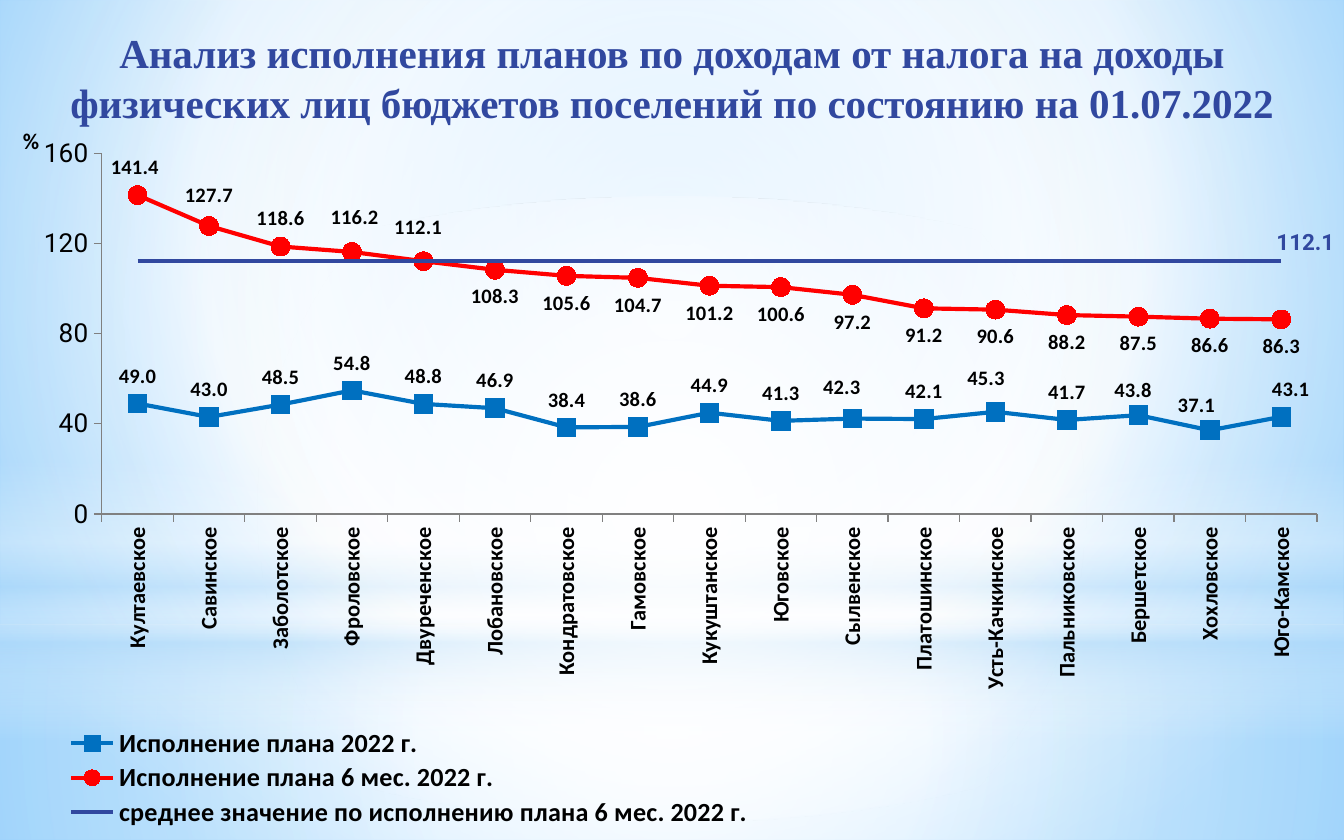
from dataclasses import dataclass, field

from lxml import etree
from pptx import Presentation
from pptx.chart.data import CategoryChartData
from pptx.dml.color import RGBColor
from pptx.enum import chart as ch, shapes, text
from pptx.oxml import parse_xml
from pptx.oxml.ns import nsdecls, qn
from pptx.util import Cm, Pt

COLORS = {"navy": "31489F", "blue": "0070C0", "red": "FF0000", "axis": "808080",
          "black": "000000", "white": "FFFFFF", "haze": "B4DCFA",
          "sky": "9ED5FF", "deep": "5BB9FF"}
WIDTH, HEIGHT = 25.4, 15.88
CENTER = (50, 50, 50, 50)
TITLE = ("Анализ исполнения планов по доходам от налога на доходы "
         "физических лиц бюджетов поселений по состоянию на 01.07.2022")
SETTLEMENTS = ["Култаевское", "Савинское", "Заболотское", "Фроловское", "Двуреченское",
               "Лобановское", "Кондратовское", "Гамовское", "Кукуштанское", "Юговское",
               "Сылвенское", "Платошинское", "Усть-Качкинское", "Пальниковское",
               "Бершетское", "Хохловское", "Юго-Камское"]
LAST = len(SETTLEMENTS) - 1
ABOVE, BELOW = ch.XL_LABEL_POSITION.ABOVE, ch.XL_LABEL_POSITION.BELOW


@dataclass
class Glow:
    """Gradient-filled backdrop shape; stops are (position, colour, opacity) in percent."""
    kind: shapes.MSO_SHAPE
    top: float
    height: float
    stops: list
    focus: tuple | None = CENTER


@dataclass
class Line:
    """Chart series; moved maps a point to the (x, y) shift of its label."""
    name: str
    values: list
    color: str
    marker: ch.XL_MARKER_STYLE
    label_position: ch.XL_LABEL_POSITION
    label_color: str = "black"
    label_size: int = 11
    label_font: str = "Calibri"
    label_all: bool = True
    moved: dict = field(default_factory=dict)


RECTANGLE, OVAL = shapes.MSO_SHAPE.RECTANGLE, shapes.MSO_SHAPE.OVAL
GLOWS = [
    Glow(RECTANGLE, 11.81, 4.07, [(0, "white", 91), (37, "white", 76), (100, "haze", 79)]),
    Glow(RECTANGLE, 0, 11.81, [(0, "white", 89), (48, "white", 62), (100, "haze", 79)]),
    Glow(RECTANGLE, 8.71, 5.28, [(0, "white", 0), (29, "white", 30), (45, "haze", 40),
                                 (55, "white", 26), (65, "haze", 60), (100, "white", 0)], None),
    Glow(OVAL, 3.71, 11.81, [(0, "white", 100), (56, "white", 0)]),
]
LINES = [
    Line("Исполнение плана 2022 г.",
         [49, 43, 48.5, 54.8, 48.8, 46.9, 38.4, 38.6, 44.9, 41.3, 42.3, 42.1, 45.3,
          41.7, 43.8, 37.1, 43.1],
         "blue", ch.XL_MARKER_STYLE.SQUARE, ABOVE,
         moved={10: (-0.008, -0.005), 12: (-0.007, -0.008), 14: (-0.004, 0.003),
                15: (-0.01, 0.003), 16: (0.007, 0)}),
    Line("Исполнение плана 6 мес. 2022 г.",
         [141.4, 127.7, 118.6, 116.2, 112.1, 108.3, 105.6, 104.7, 101.2, 100.6, 97.2,
          91.2, 90.6, 88.2, 87.5, 86.6, 86.3],
         "red", ch.XL_MARKER_STYLE.CIRCLE, BELOW,
         moved={0: (-0.002, 0), 1: (0, -0.004), 2: (0, -0.001), 3: (0.002, -0.009),
                4: (-0.004, -0.008)}),
    Line("среднее значение по исполнению плана 6 мес. 2022 г.",
         [112.1] * len(SETTLEMENTS), "navy", ch.XL_MARKER_STYLE.NONE, ABOVE, "navy", 12,
         "Roboto", label_all=False, moved={LAST: (0.018, 0)}),
]


def rgb(name: str) -> RGBColor:
    return RGBColor.from_string(COLORS[name])


def style_font(font, size: float, face: str, color: str = "black", bold: bool = True) -> None:
    font.size, font.name, font.bold = Pt(size), face, bold
    font.color.rgb = rgb(color)


def replace_with_gradient(solid_fill, stops: list, focus: tuple | None) -> None:
    """Swap a solid fill for a circular gradient, or a vertical one without a focus."""
    stop_xml = "".join(
        f'<a:gs pos="{position * 1000}"><a:srgbClr val="{COLORS[color]}">'
        f'<a:alpha val="{opacity * 1000}"/></a:srgbClr></a:gs>'
        for position, color, opacity in stops)
    if focus:
        sides = " ".join(f'{side}="{value * 1000}"' for side, value in zip("ltrb", focus))
        direction = f'<a:path path="circle"><a:fillToRect {sides}/></a:path>'
    else:
        direction = '<a:lin ang="5400000" scaled="0"/>'
    gradient = parse_xml(f'<a:gradFill {nsdecls("a")} rotWithShape="1">'
                         f'<a:gsLst>{stop_xml}</a:gsLst>{direction}</a:gradFill>')
    solid_fill.getparent().replace(solid_fill, gradient)


def set_layout(parent, index: int, **values) -> None:
    """Give a chart part a manual layout, as fractions of the chart."""
    for old in parent.findall(qn("c:layout")):
        parent.remove(old)
    layout = etree.Element(qn("c:layout"))
    manual = etree.SubElement(layout, qn("c:manualLayout"))
    for key, value in values.items():
        etree.SubElement(manual, qn(f"c:{key}")).set("val", str(value))
    parent.insert(index, layout)


def draw_glow(slide, glow: Glow):
    shape = slide.shapes.add_shape(glow.kind, 0, Cm(glow.top), Cm(WIDTH), Cm(glow.height))
    shape.shadow.inherit = False
    shape.line.fill.background()
    shape.fill.solid()
    replace_with_gradient(shape.element.xpath("./p:spPr/a:solidFill")[0], glow.stops, glow.focus)
    return shape


def style_line(series, element, line: Line) -> None:
    series.smooth = False
    series.format.line.color.rgb = rgb(line.color)
    series.format.line.width = Pt(2.25)
    series.marker.style = line.marker
    if line.marker != ch.XL_MARKER_STYLE.NONE:
        series.marker.size = 10
        series.marker.format.fill.solid()
        series.marker.format.fill.fore_color.rgb = rgb(line.color)
        series.marker.format.line.color.rgb = rgb(line.color)
    labels = series.data_labels
    labels.show_value = line.label_all
    labels.number_format, labels.number_format_is_linked = "#,##0.0", False
    labels.position = line.label_position
    style_font(labels.font, line.label_size, line.label_font, line.label_color)
    for point, (x, y) in line.moved.items():
        label = series.points[point].data_label
        style_font(label.font, line.label_size, line.label_font, line.label_color)
        label.position = ABOVE
        label_element = element.xpath(f"./c:dLbls/c:dLbl[c:idx/@val={point}]")[0]
        set_layout(label_element, 1, x=x, y=y)
        number_format = etree.Element(qn("c:numFmt"), formatCode="#,##0.0", sourceLinked="0")
        label_element.insert(2, number_format)


def style_axes(chart) -> None:
    category, value = chart.category_axis, chart.value_axis
    style_font(category.tick_labels.font, 12, "Calibri")
    style_font(value.tick_labels.font, 14, "Roboto", bold=False)
    for axis in (category, value):
        axis.has_major_gridlines = False
        axis.major_tick_mark = ch.XL_TICK_MARK.OUTSIDE
        axis.format.line.color.rgb = rgb("axis")
    value.minimum_scale, value.maximum_scale, value.major_unit = 0, 160, 40
    value.tick_labels.number_format = "#,##0"
    value.tick_labels.number_format_is_linked = False
    paragraph = value.axis_title.text_frame.paragraphs[0]
    paragraph.text = "%"
    style_font(paragraph.runs[0].font, 12, "Calibri")
    root = chart.element
    root.xpath(".//c:catAx/c:txPr/a:bodyPr")[0].set("rot", "-5400000")
    root.xpath(".//c:valAx/c:title//a:bodyPr")[0].set("rot", "0")
    set_layout(root.xpath(".//c:valAx/c:title")[0], 1, xMode="edge", yMode="edge",
               x=0.018, y=0.06)


def draw_chart(slide) -> None:
    data = CategoryChartData(number_format="0.0")
    data.categories = SETTLEMENTS
    for line in LINES:
        data.add_series(line.name, line.values)
    chart = slide.shapes.add_chart(ch.XL_CHART_TYPE.LINE_MARKERS, Cm(-0.1), Cm(1.45),
                                   Cm(25.32), Cm(14.33), data).chart
    chart.has_title = False
    style_font(chart.font, 18, "Roboto", bold=False)
    style_axes(chart)
    for series, element, line in zip(chart.plots[0].series, chart.element.xpath(".//c:ser"), LINES):
        style_line(series, element, line)
    chart.has_legend = True
    chart.legend.position = ch.XL_LEGEND_POSITION.BOTTOM
    chart.legend.include_in_layout = False
    style_font(chart.legend.font, 14, "Calibri")
    edges = {"xMode": "edge", "yMode": "edge"}
    set_layout(chart.element.xpath(".//c:legend")[0], 1, **edges, x=0.04, y=0.855, w=0.54, h=0.14)
    set_layout(chart.element.xpath(".//c:plotArea")[0], 0, layoutTarget="inner", **edges,
               x=0.08, y=0.101, w=0.908, h=0.476)


def format_title(title) -> None:
    title.left, title.top, title.width, title.height = Cm(0.5), Cm(0.4), Cm(24.4), Cm(1.33)
    frame = title.text_frame
    frame.text = TITLE
    frame.word_wrap = True
    frame.auto_size = text.MSO_AUTO_SIZE.NONE
    frame.vertical_anchor = text.MSO_ANCHOR.TOP
    paragraph = frame.paragraphs[0]
    paragraph.alignment = text.PP_ALIGN.CENTER
    style_font(paragraph.font, 22, "Times New Roman", "navy")


def main() -> None:
    presentation = Presentation()
    presentation.slide_width, presentation.slide_height = Cm(WIDTH), Cm(HEIGHT)
    slide = presentation.slides.add_slide(presentation.slide_layouts[5])
    slide.background.fill.solid()
    replace_with_gradient(slide.element.xpath(".//p:bgPr/a:solidFill")[0],
                          [(0, "sky", 100), (60, "white", 100), (100, "deep", 100)],
                          (20, 10, 20, 60))
    backdrop = [draw_glow(slide, glow) for glow in GLOWS]
    title = slide.shapes.title
    backdrop[-1].element.addnext(title.element)
    format_title(title)
    draw_chart(slide)
    presentation.save("out.pptx")


if __name__ == "__main__":
    main()
